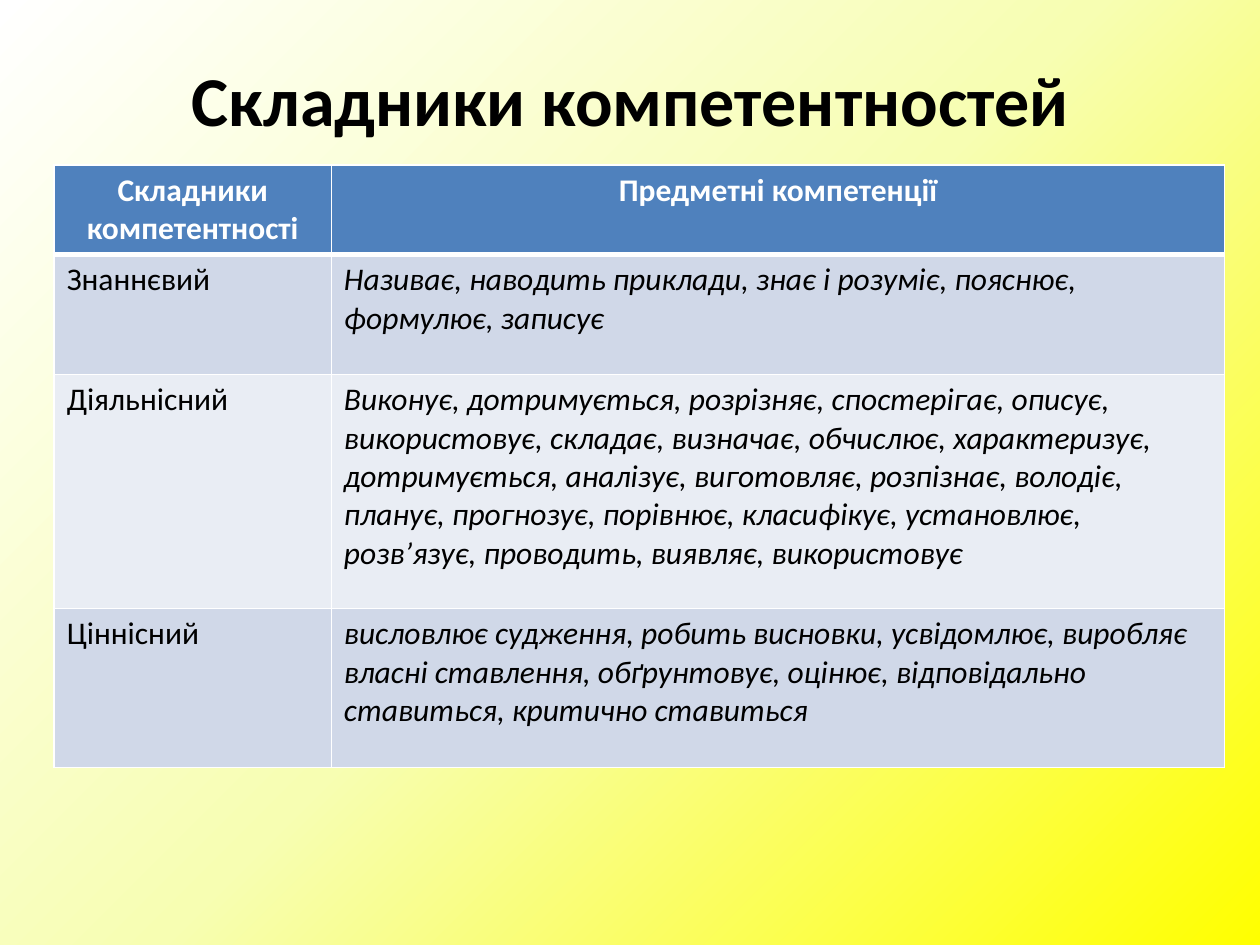
from pptx import Presentation
from pptx.dml.color import RGBColor
from pptx.enum.text import MSO_ANCHOR, PP_ALIGN
from pptx.oxml import parse_xml
from pptx.oxml.ns import nsdecls, qn
from pptx.util import Inches, Pt

CENTER, LEFT = PP_ALIGN.CENTER, PP_ALIGN.LEFT
MIDDLE = MSO_ANCHOR.MIDDLE
BLACK = RGBColor(0x00, 0x00, 0x00)
WHITE = RGBColor(0xFF, 0xFF, 0xFF)
YELLOW = RGBColor(0xFF, 0xFF, 0x00)
PALE_YELLOW = RGBColor(0xF7, 0xFE, 0xB2)
HEADER_BLUE = RGBColor(0x4F, 0x81, 0xBD)
BAND_DARK = RGBColor(0xD0, 0xD8, 0xE8)
BAND_LIGHT = RGBColor(0xE9, 0xED, 0xF4)
FONT = "Calibri"


def add_text(frame, text, size, color, align, bold=False, italic=False):
    paragraph = frame.paragraphs[0]
    paragraph.alignment = align
    run = paragraph.add_run()
    run.text = text
    run.font.name = FONT
    run.font.size = Pt(size)
    run.font.color.rgb = color
    run.font.bold = bold
    run.font.italic = italic


def add_border(cell, side, width):
    cell._tc.get_or_add_tcPr().append(parse_xml(
        f'<a:ln{side} {nsdecls("a")} w="{Pt(width)}"><a:solidFill>'
        f'<a:srgbClr val="{WHITE}"/></a:solidFill></a:ln{side}>'))


prs = Presentation()
prs.slide_width, prs.slide_height = Inches(10), Inches(7.5)
slide = prs.slides.add_slide(prs.slide_layouts[5])

# Background: gradient spreading from the bottom right corner
slide.background.fill.solid()
stops = "".join(
    f'<a:gs pos="{percent * 1000}"><a:srgbClr val="{color}"/></a:gs>'
    for percent, color in ((0, YELLOW), (50, PALE_YELLOW), (100, WHITE)))
gradient = parse_xml(
    f'<a:gradFill {nsdecls("a")} rotWithShape="1"><a:gsLst>{stops}</a:gsLst>'
    '<a:path path="circle"><a:fillToRect l="100000" t="100000"/></a:path>'
    '</a:gradFill>')
background = slide.element.find(".//" + qn("p:bgPr"))
background.replace(background.find(qn("a:solidFill")), gradient)

# Title
title = slide.shapes.title
title.left, title.top = Inches(1.14), Inches(0.44)
title.width, title.height = Inches(7.72), Inches(0.69)
title.text_frame.vertical_anchor = MIDDLE
add_text(title.text_frame, "Складники компетентностей", 40, BLACK, CENTER, bold=True)

# Table of competence components
components = [
    ("Складники компетентності", "Предметні компетенції"),
    ("Знаннєвий",
     "Називає, наводить приклади, знає і розуміє, пояснює, формулює, записує"),
    ("Діяльнісний",
     "Виконує, дотримується, розрізняє, спостерігає, описує, використовує, "
     "складає, визначає, обчислює, характеризує, дотримується, аналізує, "
     "виготовляє, розпізнає, володіє, планує, прогнозує, порівнює, "
     "класифікує, установлює, розв’язує, проводить, виявляє, використовує"),
    ("Ціннісний",
     "висловлює судження, робить висновки, усвідомлює, виробляє власні "
     "ставлення, обґрунтовує, оцінює, відповідально ставиться, критично "
     "ставиться"),
]
column_widths = (2.2, 7.09)
row_heights = (0.7, 0.95, 1.86, 1.26)
table = slide.shapes.add_table(
    len(components), len(column_widths), Inches(0.43), Inches(1.31),
    Inches(sum(column_widths)), Inches(sum(row_heights))).table
for column, width in zip(table.columns, column_widths):
    column.width = Inches(width)
for row, height in zip(table.rows, row_heights):
    row.height = Inches(height)

for r, texts in enumerate(components):
    header = r == 0
    band = HEADER_BLUE if header else (BAND_LIGHT, BAND_DARK)[r % 2]
    for c, text in enumerate(texts):
        cell = table.cell(r, c)
        # The line under the header is thicker
        add_border(cell, "L", 1)
        add_border(cell, "R", 1)
        add_border(cell, "T", 3 if r == 1 else 1)
        add_border(cell, "B", 3 if header else 1)
        cell.fill.solid()
        cell.fill.fore_color.rgb = band
        add_text(cell.text_frame, text, 18, WHITE if header else BLACK,
                 CENTER if header else LEFT,
                 bold=header, italic=not header and c == 1)

prs.save("out.pptx")
